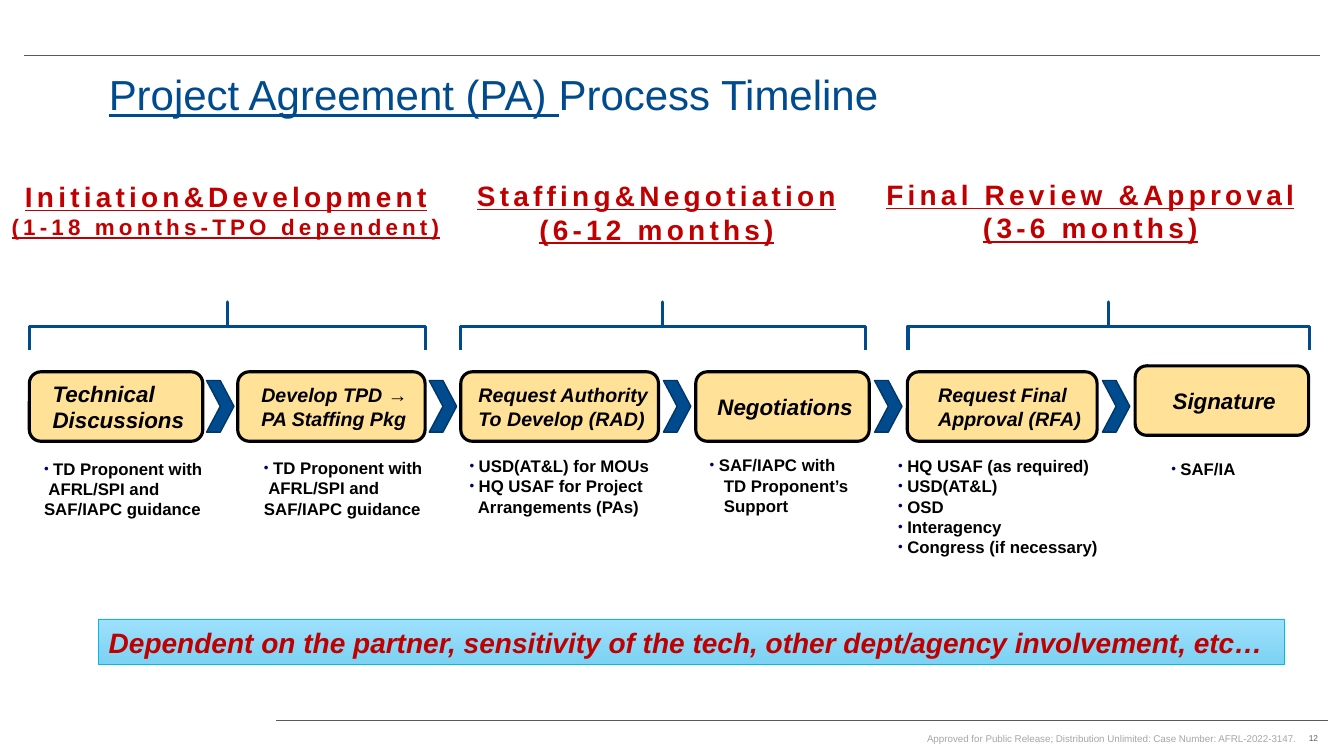
from dataclasses import dataclass
from itertools import pairwise

from lxml import etree
from pptx import Presentation
from pptx.dml.color import RGBColor
from pptx.enum.shapes import MSO_CONNECTOR, MSO_SHAPE
from pptx.enum.text import MSO_ANCHOR, MSO_AUTO_SIZE, PP_ALIGN
from pptx.oxml.ns import qn
from pptx.util import Cm, Pt

LEFT, MID, RIGHT = PP_ALIGN.LEFT, PP_ALIGN.CENTER, PP_ALIGN.RIGHT
TOP, CENTER = MSO_ANCHOR.TOP, MSO_ANCHOR.MIDDLE
ROUND, RECT = MSO_SHAPE.ROUNDED_RECTANGLE, MSO_SHAPE.RECTANGLE
BRACE, CHEVRON = MSO_SHAPE.RIGHT_BRACE, MSO_SHAPE.CHEVRON
FONT = "Arial"
HEX = {
    "blue": "004B8D", "edge": "003768", "red": "C00000", "black": "000000",
    "sand": "FFE297", "dot": "000066", "rule": "595A59", "foot": "A6A6A6",
    "sky": "9DE0FC", "pool": "7CD2F2", "aqua": "00BCE4",
}


@dataclass
class Phase:
    name: str
    time: str
    left: float
    top: float
    width: float
    mid: float
    span: float
    small: int = 20


@dataclass
class Item:
    text: str
    dot: bool = True
    pad: float = 0.0


@dataclass
class Step:
    lines: list[str]
    left: float
    width: float
    inset: float
    size: int
    note: tuple[float, float, float]
    items: list[Item]
    top: float = 9.37


PHASES = [
    Phase("Initiation&Development", "(1-18 months-TPO dependent)",
          -1.55, 4.39, 13.21, 5.73, 9.98, 16),
    Phase("Staffing&Negotiation", "(6-12 months)", 9.68, 4.37, 12.45, 16.7, 10.21),
    Phase("Final Review &Approval", "(3-6 months)", 20.6, 4.34, 12.47, 27.93, 10.11),
]
GUIDE = [Item("TD Proponent with"),
         Item("AFRL/SPI and SAF/IAPC guidance", False, 0.11)]
STEPS = [
    Step(["Technical", "Discussions"], 0.74, 4.37, 0.5, 16,
         (0.86, 11.43, 5.08), GUIDE),
    Step(["Develop TPD →", "PA Staffing Pkg"], 5.99, 4.72, 0.51, 14,
         (6.4, 11.41, 5.08), GUIDE),
    Step(["Request Authority", "To Develop (RAD)"], 11.61, 4.98, 0.36, 14,
         (11.58, 11.36, 6.96),
         [Item("USD(AT&L) for MOUs"), Item("HQ USAF for Project"),
          Item("Arrangements (PAs)", False, 0.21)]),
    Step(["Negotiations"], 17.53, 4.37, 0.46, 16,
         (17.63, 11.34, 4.45),
         [Item("SAF/IAPC with"), Item("TD Proponent’s", False, 0.36),
          Item("Support", False, 0.36)]),
    Step(["Request Final", "Approval (RFA)"], 22.86, 4.78, 0.69, 14,
         (22.38, 11.36, 6.4),
         [Item("HQ USAF (as required)"), Item("USD(AT&L)"), Item("OSD"),
          Item("Interagency"), Item("Congress (if necessary)")]),
    Step(["Signature"], 28.6, 4.37, 0.86, 16,
         (29.26, 11.43, 2.5), [Item("SAF/IA")], 9.22),
]


def tint(name: str) -> RGBColor:
    return RGBColor.from_string(HEX[name])


def place(shape, left: float, top: float, width: float, height: float) -> None:
    shape.left, shape.top = Cm(left), Cm(top)
    shape.width, shape.height = Cm(width), Cm(height)


def setup(frame, anchor=TOP) -> None:
    frame.word_wrap = True
    frame.auto_size = MSO_AUTO_SIZE.NONE
    frame.vertical_anchor = anchor
    frame.margin_left = frame.margin_right = Cm(0.25)
    frame.margin_top = frame.margin_bottom = Cm(0.13)


def next_par(frame, first: bool, align=LEFT):
    par = frame.paragraphs[0] if first else frame.add_paragraph()
    par.alignment = align
    return par


def add_run(par, text: str, size: float, color: str, bold: bool = False,
            italic: bool = False, under: bool = False):
    run = par.add_run()
    run.text = text
    font = run.font
    font.name, font.size = FONT, Pt(size)
    font.bold, font.italic, font.underline = bold, italic, under
    font.color.rgb = tint(color)
    return run


def add_box(slide, left: float, top: float, width: float, height: float):
    box = slide.shapes.add_textbox(Cm(left), Cm(top), Cm(width), Cm(height))
    setup(box.text_frame)
    return box


def add_form(slide, kind, left: float, top: float, width: float, height: float,
             fill: str | None, edge: str, weight: float):
    form = slide.shapes.add_shape(kind, Cm(left), Cm(top), Cm(width), Cm(height))
    form.shadow.inherit = False
    if fill:
        form.fill.solid()
        form.fill.fore_color.rgb = tint(fill)
    else:
        form.fill.background()
    form.line.color.rgb = tint(edge)
    form.line.width = Pt(weight)
    return form


def add_rule(slide, left: float, right: float, top: float) -> None:
    rule = slide.shapes.add_connector(
        MSO_CONNECTOR.STRAIGHT, Cm(left), Cm(top), Cm(right), Cm(top))
    rule.line.color.rgb = tint("rule")
    rule.line.width = Pt(0.5)
    etree.SubElement(rule.element.spPr, qn("a:effectLst"))


def set_list(par, item: Item) -> None:
    props = par._p.get_or_add_pPr()
    hang = Cm(0.23) if item.dot else 0
    props.set("marL", str(hang))
    props.set("indent", str(-hang if item.dot else Cm(item.pad)))
    if not item.dot:
        etree.SubElement(props, qn("a:buNone"))
    else:
        color = etree.SubElement(props, qn("a:buClr"))
        etree.SubElement(color, qn("a:srgbClr"), val=HEX["dot"])
        etree.SubElement(props, qn("a:buSzPct"), val="80000")
        etree.SubElement(props, qn("a:buFont"), typeface=FONT)
        etree.SubElement(props, qn("a:buChar"), char="•")
    par.space_before = Pt(0)


def add_phase(slide, phase: Phase) -> None:
    frame = add_box(slide, phase.left, phase.top, phase.width, 1.9).text_frame
    for row, (text, size) in enumerate([(phase.name, 20), (phase.time, phase.small)]):
        par = next_par(frame, row == 0, MID)
        par._p.get_or_add_pPr().set("marL", str(Cm(1.27)))
        run = add_run(par, text, size, "red", bold=True, under=True)
        run._r.get_or_add_rPr().set("spc", "300")
    deep, axis = 1.22, 8.22
    brace = add_form(slide, BRACE, phase.mid - deep / 2, axis - phase.span / 2,
                     deep, phase.span, None, "blue", 2.25)
    brace.adjustments[0] = 0
    brace.rotation = 270


def add_step(slide, step: Step, body) -> None:
    form = add_form(slide, ROUND, step.left, step.top, step.width, 1.75,
                    "sand", "black", 2.25)
    frame = form.text_frame
    setup(frame, CENTER)
    frame.margin_left, frame.margin_right = Cm(step.inset), 0
    for row, text in enumerate(step.lines):
        add_run(next_par(frame, row == 0), text, step.size, "black", True, True)

    left, top, width = step.note
    body = body or add_box(slide, left, top, width, 2.5)
    place(body, left, top, width, 2.5)
    setup(body.text_frame)
    for row, item in enumerate(step.items):
        par = next_par(body.text_frame, row == 0)
        set_list(par, item)
        add_run(par, item.text, 12, "black", True)


def main() -> None:
    deck = Presentation()
    deck.slide_width, deck.slide_height = Cm(33.86), Cm(19.05)
    slide = deck.slides.add_slide(deck.slide_layouts.get_by_name("Comparison"))
    bodies = [hold for hold in slide.placeholders if hold.placeholder_format.idx > 0]

    # Rules and footer
    add_rule(slide, 0.61, 33.25, 1.4)
    add_rule(slide, 6.96, 33.45, 18.16)
    for text, size, color, left, width in [
        ("Approved for Public Release; Distribution Unlimited: Case Number: "
         "AFRL-2022-3147.", 7, "foot", 14.66, 18.24),
        ("12", 6, "rule", 32.49, 0.97),
    ]:
        foot = add_box(slide, left, 18.34, width, 0.56).text_frame
        add_run(next_par(foot, True, RIGHT), text, size, color)

    # Title
    title = slide.shapes.title
    place(title, 2.49, 1.09, 20.88, 2.72)
    setup(title.text_frame, CENTER)
    par = next_par(title.text_frame, True)
    par.line_spacing = 0.9
    add_run(par, "Project Agreement (PA) ", 30, "blue", under=True)
    add_run(par, "Process Timeline", 30, "blue")

    # Phases, then steps with their lists
    for phase in PHASES:
        add_phase(slide, phase)
    for step in STEPS:
        add_step(slide, step, bodies.pop(0) if bodies else None)

    # Chevrons centred in the gaps between steps
    for last, step in pairwise(STEPS):
        mid = (last.left + last.width + step.left) / 2
        add_form(slide, CHEVRON, mid - 0.345, 9.59, 0.69, 1.3, "blue", "edge", 1)

    # Banner
    banner = add_form(slide, RECT, 2.49, 15.62, 29.87, 1.12, "sky", "aqua", 0.5)
    banner.fill.gradient()
    banner.fill.gradient_angle = 270
    for stop, name in zip(banner.fill.gradient_stops, ("sky", "pool")):
        stop.color.rgb = tint(name)
    setup(banner.text_frame, CENTER)
    add_run(next_par(banner.text_frame, True),
            "Dependent on the partner, sensitivity of the tech, "
            "other dept/agency involvement, etc…", 20, "red", True, True)

    deck.save("out.pptx")


if __name__ == "__main__":
    main()
